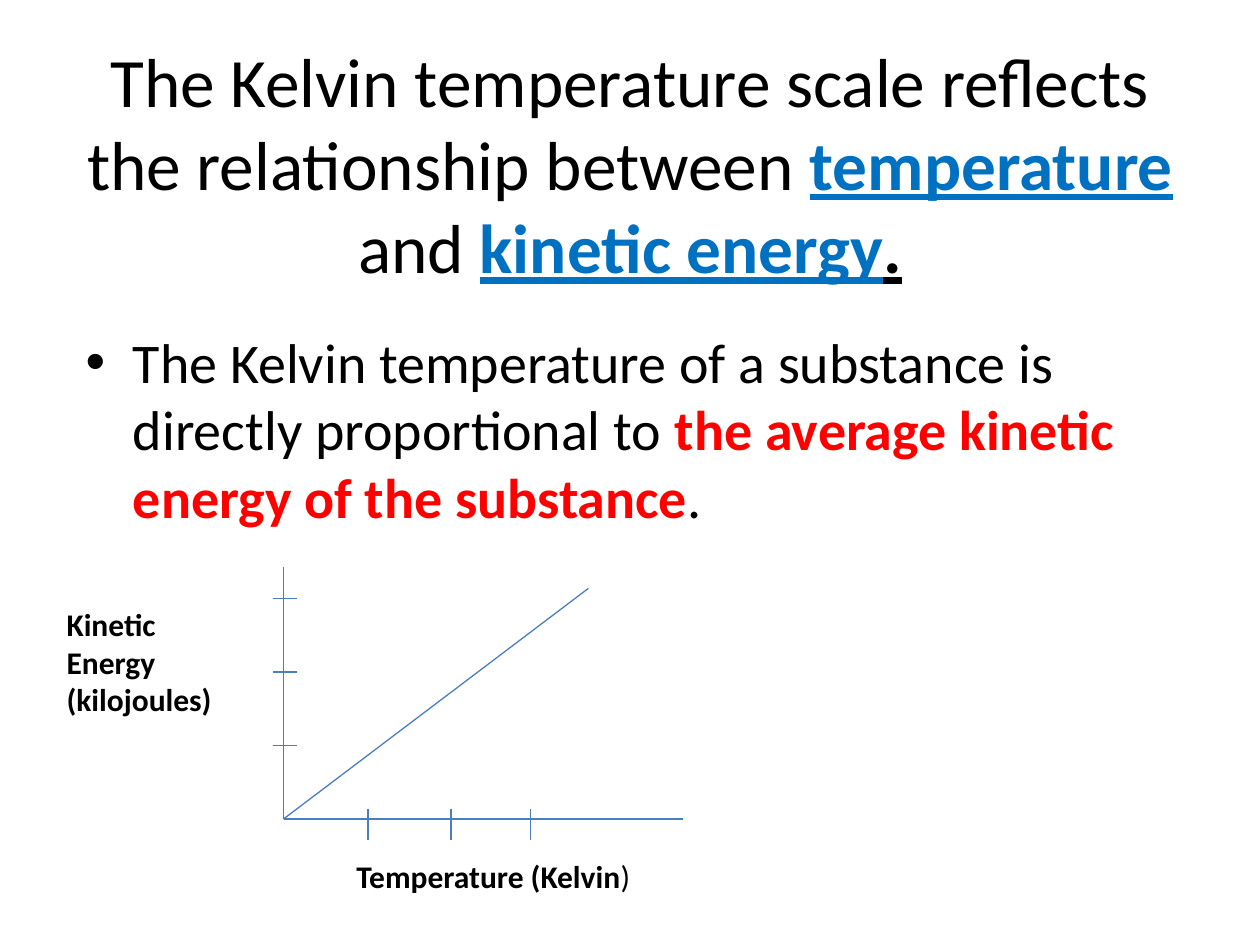
"""Build a slide on Kelvin temperature and kinetic energy."""
import pptx
import pptx.dml.color
import pptx.enum.shapes
import pptx.enum.text
import pptx.oxml
import pptx.oxml.ns
import pptx.util

Inches = pptx.util.Inches

THEME = {
    "font": "Calibri",
    "size": {"title": 39.6, "body": 32, "label": 18},
    "ink": "000000", "blue": "0070C0", "red": "FF0000", "line": "4B7EBC",
    "width": 0.75,
}
KEY = {"bold": True, "underline": True}
BOLD = {"bold": True}

TITLE = [[
    ("The Kelvin temperature scale reflects the relationship between ", "ink", {}),
    ("temperature", "blue", KEY),
    (" and ", "ink", {}),
    ("kinetic energy", "blue", KEY),
    (".", "ink", KEY),
]]
BODY = [[
    ("The Kelvin temperature of a substance is directly proportional to ", "ink", {}),
    ("the average kinetic energy of the substance", "red", BOLD),
    (".", "ink", {}),
]]
LABELS = [
    ((0.43, 4.75, 1.82, 1.01),
     [[(word, "ink", BOLD)] for word in ("Kinetic", "Energy", "(kilojoules)")]),
    ((2.73, 6.75, 2.95, 0.4),
     [[("Temperature (Kelvin", "ink", BOLD), (")", "ink", {})]]),
]
LEFT, BASE = 2.25, 6.5
AXES = [(LEFT, 4.5), (5.42, BASE), (4.67, 4.67)]
TICKS_X = [2.92, 3.58, 4.21]
TICKS_Y = [BASE - 1.75 * step / 3 for step in (1, 2, 3)]


def color(name):
    return pptx.dml.color.RGBColor.from_string(THEME[name])


def place(shape, box):
    for name, value in zip(("left", "top", "width", "height"), box):
        setattr(shape, name, Inches(value))


def write(shape, paras, kind):
    frame = shape.text_frame
    frame.word_wrap = True
    frame.auto_size = pptx.enum.text.MSO_AUTO_SIZE.NONE
    for index, runs in enumerate(paras):
        para = frame.add_paragraph() if index else frame.paragraphs[0]
        para.space_before = pptx.util.Pt(0)
        for text, tint, style in runs:
            run = para.add_run()
            run.text = text
            look = {"name": THEME["font"],
                    "size": pptx.util.Pt(THEME["size"][kind]), **style}
            for name, value in look.items():
                setattr(run.font, name, value)
            run.font.color.rgb = color(tint)


def draw(slide, start, end):
    line = slide.shapes.add_connector(
        pptx.enum.shapes.MSO_CONNECTOR.STRAIGHT,
        *(Inches(value) for value in (*start, *end)))
    line.line.color.rgb = color("line")
    line.line.width = pptx.util.Pt(THEME["width"])
    props = line.element.find(pptx.oxml.ns.qn("p:spPr"))
    props.append(pptx.oxml.parse_xml(
        "<a:effectLst %s/>" % pptx.oxml.ns.nsdecls("a")))


def main():
    deck = pptx.Presentation()
    deck.slide_width, deck.slide_height = Inches(10), Inches(7.5)
    slide = deck.slides.add_slide(deck.slide_layouts[1])
    title, body = slide.placeholders
    place(title, (0.5, 0.29, 9, 2))
    write(title, TITLE, "title")
    place(body, (0.58, 2.55, 9, 1.75))
    write(body, BODY, "body")

    for end in AXES:
        draw(slide, (LEFT, BASE), end)
    for left in TICKS_X:
        draw(slide, (left, 6.42), (left, 6.67))
    for top in TICKS_Y:
        draw(slide, (2.17, top), (2.36, top))
    for box, paras in LABELS:
        label = slide.shapes.add_textbox(*(Inches(value) for value in box))
        write(label, paras, "label")
    deck.save("out.pptx")


if __name__ == "__main__":
    main()
